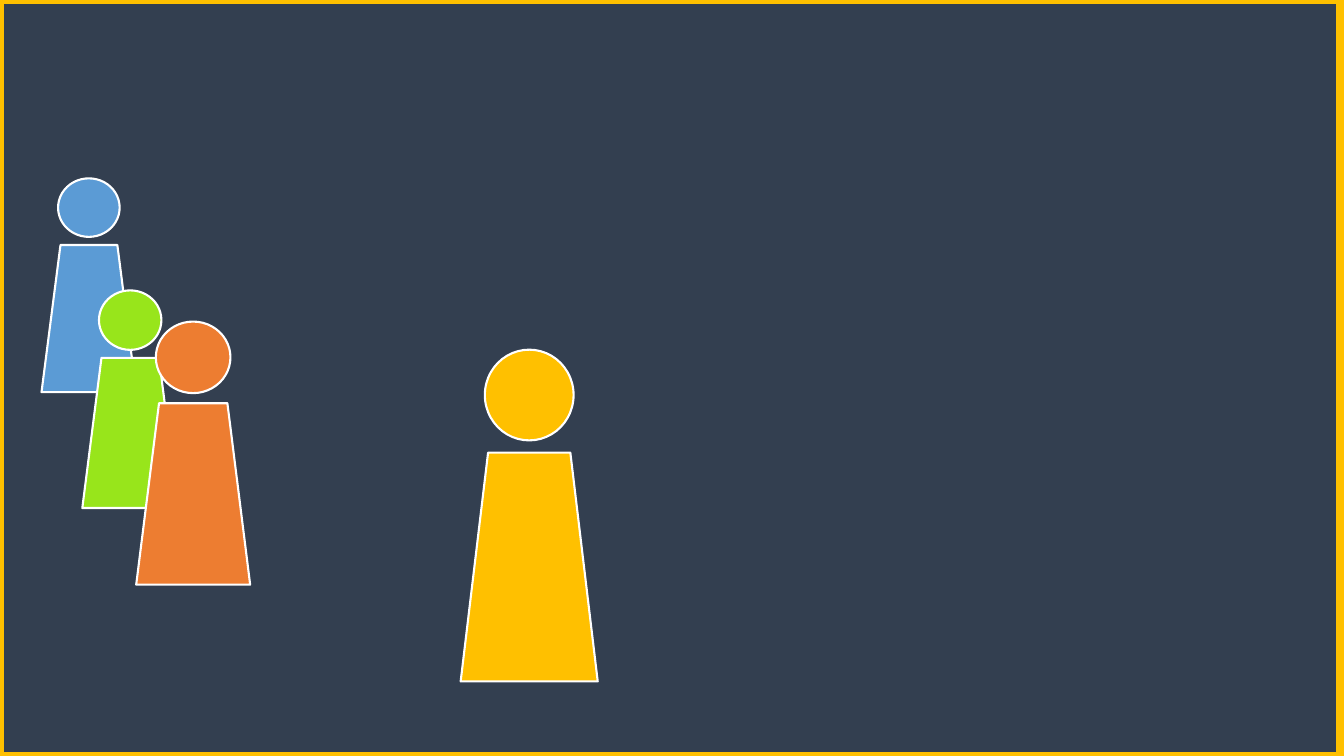
from typing import NamedTuple

from pptx import Presentation
from pptx.dml.color import RGBColor
from pptx.enum.shapes import MSO_SHAPE
from pptx.shapes.autoshape import Shape
from pptx.slide import Slide
from pptx.util import Pt

RECTANGLE = MSO_SHAPE.RECTANGLE
OVAL = MSO_SHAPE.OVAL
TRAPEZOID = MSO_SHAPE.FLOWCHART_MANUAL_OPERATION

NAVY = RGBColor(0x33, 0x3F, 0x50)
GOLD = RGBColor(0xFF, 0xC0, 0x00)
WHITE = RGBColor(0xFF, 0xFF, 0xFF)
BLUE = RGBColor(0x5B, 0x9B, 0xD5)
GREEN = RGBColor(0x98, 0xE5, 0x1B)
ORANGE = RGBColor(0xED, 0x7D, 0x31)

SLIDE_WIDTH = 960
SLIDE_HEIGHT = 540
BACKDROP_WIDTH = 957
BORDER_WEIGHT = 6
OUTLINE_WEIGHT = 1.5


class Part(NamedTuple):
    top: float
    width: float
    height: float


class Person(NamedTuple):
    color: RGBColor
    center: float
    head: Part
    body: Part


PEOPLE = (
    Person(BLUE, 63.5, Part(127.4, 44, 41.8), Part(175, 67.7, 105.1)),
    Person(GREEN, 93, Part(207.4, 44.6, 42.5), Part(255.6, 68.4, 107.3)),
    Person(GOLD, 378, Part(249.8, 63.4, 64.8), Part(323.3, 97.9, 163.4)),
    Person(ORANGE, 138, Part(229.7, 53.3, 51.1), Part(288, 81.4, 129.6)),
)


def paint(shape: Shape, fill: RGBColor, line: RGBColor, weight: float) -> None:
    shape.shadow.inherit = False
    shape.fill.solid()
    shape.fill.fore_color.rgb = fill
    shape.line.color.rgb = line
    shape.line.width = Pt(weight)


def draw_person(slide: Slide, person: Person) -> None:
    figure = slide.shapes.add_group_shape()
    for outline, part, rotation in ((OVAL, person.head, 0), (TRAPEZOID, person.body, 180)):
        left = person.center - part.width / 2
        piece = figure.shapes.add_shape(
            outline, Pt(left), Pt(part.top), Pt(part.width), Pt(part.height)
        )
        piece.rotation = rotation
        paint(piece, person.color, WHITE, OUTLINE_WEIGHT)


def main() -> None:
    presentation = Presentation()
    presentation.slide_width = Pt(SLIDE_WIDTH)
    presentation.slide_height = Pt(SLIDE_HEIGHT)
    slide = presentation.slides.add_slide(presentation.slide_layouts[6])

    backdrop = slide.shapes.add_shape(
        RECTANGLE, Pt(0), Pt(0), Pt(BACKDROP_WIDTH), Pt(SLIDE_HEIGHT)
    )
    paint(backdrop, NAVY, GOLD, BORDER_WEIGHT)
    for person in PEOPLE:
        draw_person(slide, person)

    presentation.save("out.pptx")


if __name__ == "__main__":
    main()
